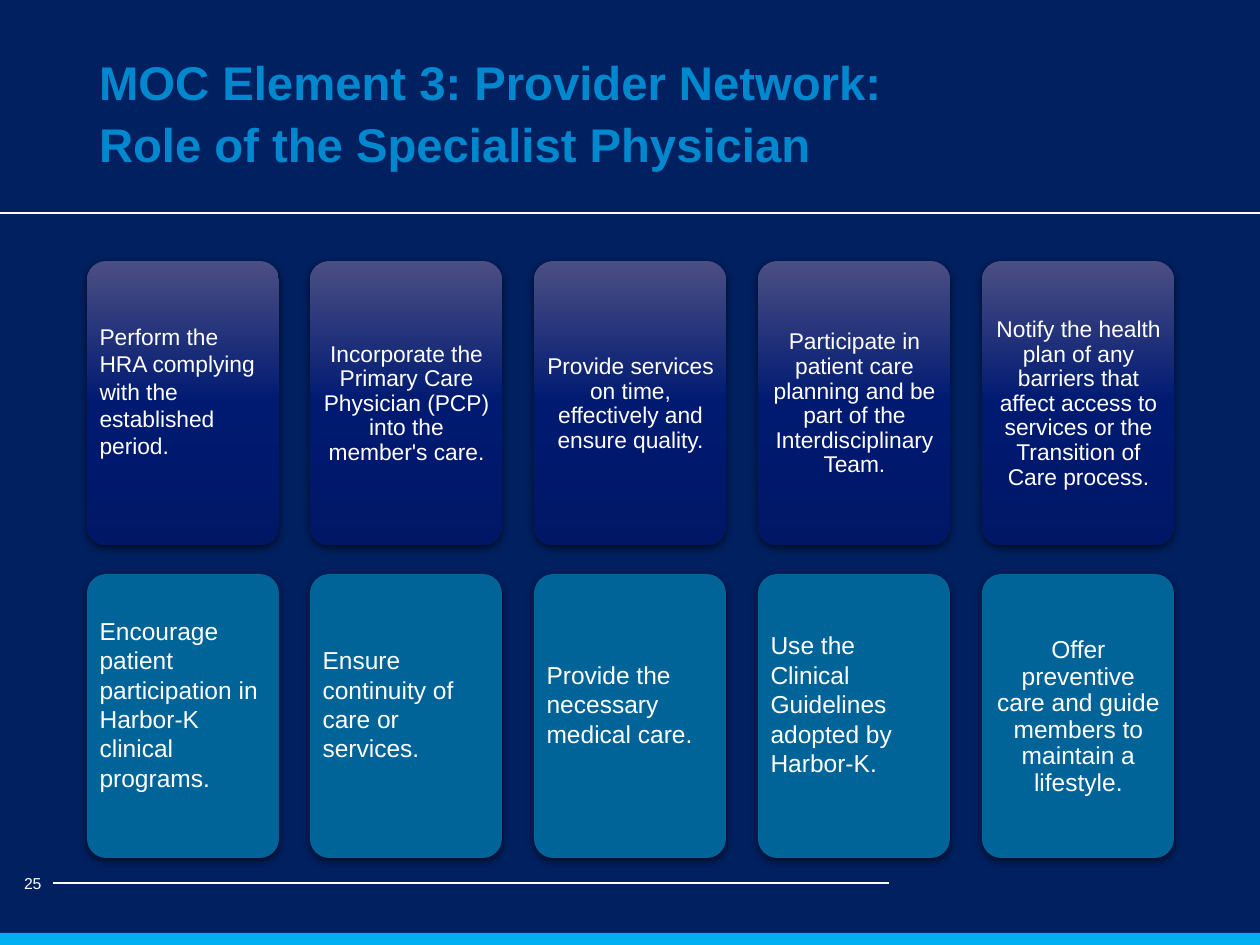
from copy import deepcopy

from lxml import etree
from pptx import Presentation, util as u
from pptx.dml.color import RGBColor
from pptx.enum import shapes, text
from pptx.oxml.ns import qn

PX = 914400 / 126
WHITE = "FFFFFF"
GRADIENT = [(0, "4B4E83"), (0.5, "001A72"), (1, "001765")]
LEFT, CENTER = text.PP_ALIGN.LEFT, text.PP_ALIGN.CENTER
FIRST_CARD, LAST_CARD = 87, 982

TOP_ROW = [
    ("Perform the HRA complying with the established period.", LEFT),
    ("Incorporate the Primary Care Physician (PCP) into the member's care.", CENTER),
    ("Provide services on time, effectively and ensure quality.", CENTER),
    ("Participate in patient care planning and be part of the Interdisciplinary Team.", CENTER),
    ("Notify the health plan of any barriers that affect access to services "
     "or the Transition of Care process.", CENTER),
]
BOTTOM_ROW = [
    ("Encourage patient participation in Harbor-K clinical programs.", LEFT),
    ("Ensure continuity of care or services.", LEFT),
    ("Provide the necessary medical care.", LEFT),
    ("Use the Clinical Guidelines adopted by Harbor-K.", LEFT),
    ("Offer preventive care and guide members to maintain a lifestyle.", CENTER),
]


def px(*lengths):
    return [u.Emu(round(length * PX)) for length in lengths]


def color(hex_string):
    return RGBColor.from_string(hex_string)


def write(box, lines, size, hue=WHITE, bold=False, align=LEFT, spacing=1.0, after=0,
          insets=(12, 6, 12, 6)):
    """Fill a shape's text frame with one paragraph per line."""
    frame = box.text_frame
    frame.word_wrap = True
    frame.auto_size = text.MSO_AUTO_SIZE.NONE
    frame.vertical_anchor = text.MSO_ANCHOR.MIDDLE
    (frame.margin_left, frame.margin_top,
     frame.margin_right, frame.margin_bottom) = px(*insets)
    frame.text = "\n".join(lines)
    for para in frame.paragraphs:
        para.alignment = align
        para.line_spacing = spacing
        para.space_before = u.Pt(0)
        para.space_after = u.Pt(after)
        for span in para.runs:
            span.font.name = "Arial"
            span.font.size = u.Pt(size)
            span.font.bold = bold
            span.font.color.rgb = color(hue)


def add_block(page, kind, place, fill=None):
    block = page.shapes.add_shape(kind, *px(*place))
    block.shadow.inherit = False
    block.line.fill.background()
    if fill:
        block.fill.solid()
        block.fill.fore_color.rgb = color(fill)
    return block


def add_rule(page, left, right, y):
    rule = page.shapes.add_connector(shapes.MSO_CONNECTOR.STRAIGHT, *px(left, y, right, y))
    rule.line.color.rgb = color(WHITE)
    rule.line.width = u.Pt(1.5)
    etree.SubElement(rule._element.spPr, qn("a:effectLst"))


def apply_gradient(block):
    block.fill.gradient()
    block.fill.gradient_angle = 270
    stop_list = block._element.spPr.find(".//" + qn("a:gsLst"))
    stop_list.append(deepcopy(stop_list[-1]))
    for stop, (position, hue) in zip(block.fill.gradient_stops, GRADIENT):
        stop.position = position
        stop.color.rgb = color(hue)


def add_soft_shadow(block):
    effects = block._element.spPr.find(qn("a:effectLst"))
    shadow = etree.SubElement(effects, qn("a:outerShdw"), blurRad=str(u.Pt(4.5)),
                              dist=str(u.Pt(1.5)), dir="5400000", rotWithShape="0")
    shade = etree.SubElement(shadow, qn("a:srgbClr"), val="000000")
    etree.SubElement(shade, qn("a:alpha"), val="63000")


def add_card_row(page, cards, top, size, fill=None):
    """Add a row of cards; without a fill they take the gradient."""
    for column, (wording, align) in enumerate(cards):
        left = FIRST_CARD + column * (LAST_CARD - FIRST_CARD) // (len(cards) - 1)
        card = add_block(page, shapes.MSO_SHAPE.ROUNDED_RECTANGLE, (left, top, 192, 284), fill)
        card.adjustments[0] = 0.1
        if not fill:
            apply_gradient(card)
        add_soft_shadow(card)
        centered = align == CENTER
        write(card, [wording], size, align=align, spacing=0.9 if centered else 1.0,
              insets=(7, 8, 6, 6) if centered else (7, 6, 6, 30))


def main():
    deck = Presentation()
    deck.slide_width, deck.slide_height = px(1260, 945)
    page = deck.slides.add_slide(deck.slide_layouts[5])
    page.background.fill.solid()
    page.background.fill.fore_color.rgb = color("002060")

    title = page.shapes.title
    title.left, title.top, title.width, title.height = px(87, 25, 1086, 183)
    write(title, ["MOC Element 3: Provider Network:", "Role of the Specialist Physician"],
          27, hue="0088CE", bold=True, spacing=0.9, after=6)

    add_rule(page, 0, 1260, 213)
    add_block(page, shapes.MSO_SHAPE.RECTANGLE, (0, 933, 1260, 13), "00B0F0")
    add_rule(page, 53, 889, 883)
    number = page.shapes.add_textbox(*px(12, 858, 56, 50))
    write(number, ["25"], 9, after=6)

    add_card_row(page, TOP_ROW, 261, 13)
    add_card_row(page, BOTTOM_ROW, 574, 14, "006498")
    deck.save("out.pptx")


if __name__ == "__main__":
    main()
